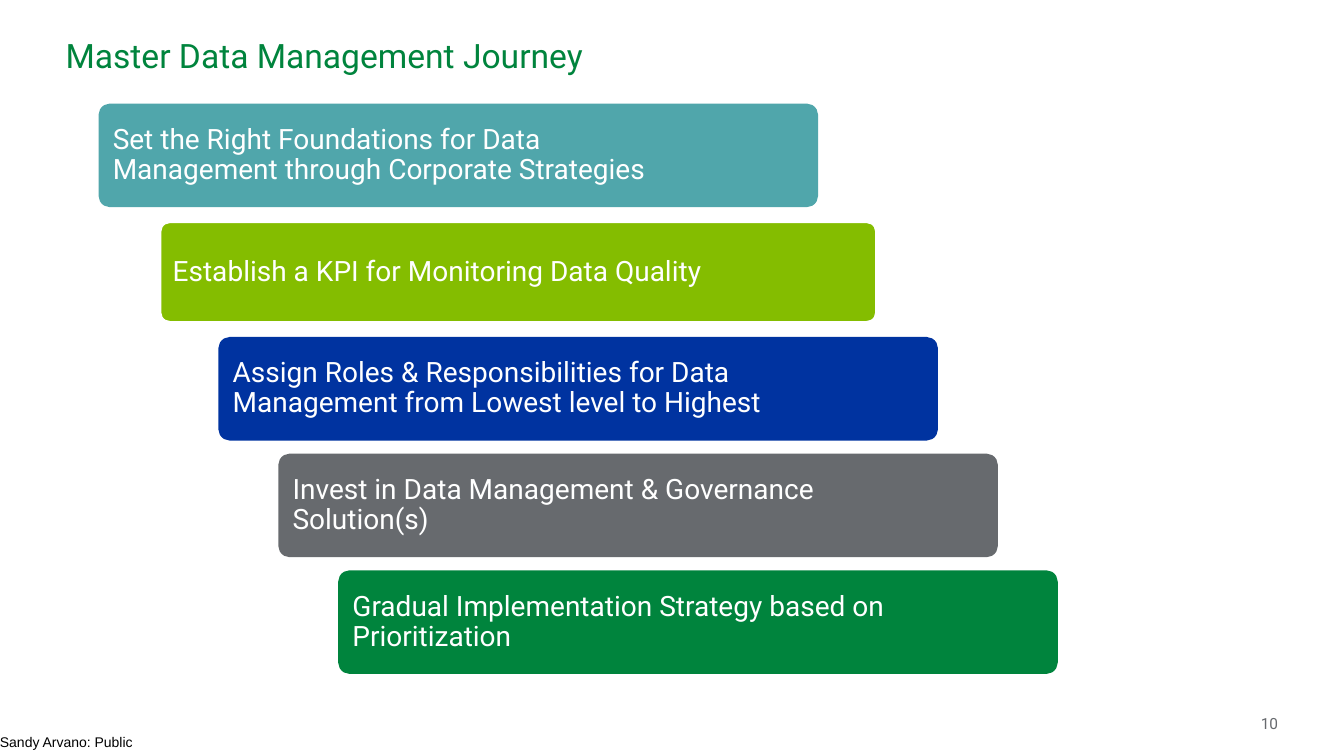
from pptx import Presentation
from pptx.dml.color import RGBColor
from pptx.enum import shapes, text
from pptx.util import Pt

STEPS = [
    ("Set the Right Foundations for Data Management through Corporate Strategies", "50A6AB", "50A6AB"),
    ("Establish a KPI for Monitoring Data Quality", "84BD00", "FFFFFF"),
    ("Assign Roles & Responsibilities for Data Management from Lowest level to Highest", "0033A0", "0033A0"),
    ("Invest in Data Management & Governance Solution(s)", "676A6E", "676A6E"),
    ("Gradual Implementation Strategy based on Prioritization", "00843D", "00843D"),
]


def paint(fmt, color):
    """Apply a hex colour to a fill."""
    fmt.solid()
    fmt.fore_color.rgb = RGBColor.from_string(color)


def write(shape, words, size, color, font="Roboto", align="LEFT", anchor="MIDDLE", pads=(0, 0, 0, 0)):
    """Set the words of a shape in one style; pads run left, top, right, bottom."""
    frame = shape.text_frame
    frame.text = words
    frame.word_wrap = True
    frame.auto_size = text.MSO_AUTO_SIZE.NONE
    frame.vertical_anchor = text.MSO_ANCHOR[anchor]
    frame.margin_left, frame.margin_top, frame.margin_right, frame.margin_bottom = map(Pt, pads)
    para = frame.paragraphs[0]
    para.alignment = text.PP_ALIGN[align]
    para.font.name, para.font.size = font, Pt(size)
    paint(para.font.fill, color)
    return para


def head(slide, left, top, width, height):
    """Place the slide title in its box."""
    title = slide.shapes.title
    title.left, title.top, title.width, title.height = map(Pt, (left, top, width, height))
    write(title, "Master Data Management Journey", 24, "00843D", anchor="TOP", pads=(0, 3.6, 0, 3.6))


def stairs(slide, left, top, width, height):
    """Spread the steps as overlapping bars from top left to bottom right."""
    wide, high = 512, 72
    gaps = len(STEPS) - 1
    for i, (words, fill, edge) in enumerate(STEPS):
        x = left + i * (width - wide) / gaps
        y = top + i * (height - high) / gaps
        bar = slide.shapes.add_shape(
            shapes.MSO_SHAPE.ROUNDED_RECTANGLE, Pt(x), Pt(y), Pt(wide), Pt(high))
        bar.adjustments[0] = 0.1
        bar.shadow.inherit = False
        paint(bar.fill, fill)
        paint(bar.line.fill, edge)
        bar.line.width = Pt(2)
        para = write(bar, words, 20, "FFFFFF", pads=(7.2, 7.2, 111, 7.2))
        para.line_spacing = 0.9


def foot(slide, left, top, width, height):
    """Place the label at the lower left and the page number at the right."""
    label = slide.shapes.add_textbox(Pt(left), Pt(top + height - 19.4), Pt(119), Pt(19.4))
    write(label, "Sandy Arvano: Public", 10, "000000", "Arial")
    page = slide.shapes.add_textbox(Pt(left + width - 28), Pt(top), Pt(28), Pt(18))
    write(page, "10", 11, "676A6E", align="RIGHT", pads=(0, 3.6, 0, 3.6))


def main():
    """Build and save the slide."""
    deck = Presentation()
    deck.slide_width, deck.slide_height = Pt(960), Pt(540)
    slide = deck.slides.add_slide(deck.slide_layouts[5])
    head(slide, 46.8, 21.6, 867.6, 64.8)
    stairs(slide, 71.4, 75, 683.2, 405.4)
    foot(slide, 0, 507.6, 913, 32.4)
    deck.save("out.pptx")


if __name__ == "__main__":
    main()
